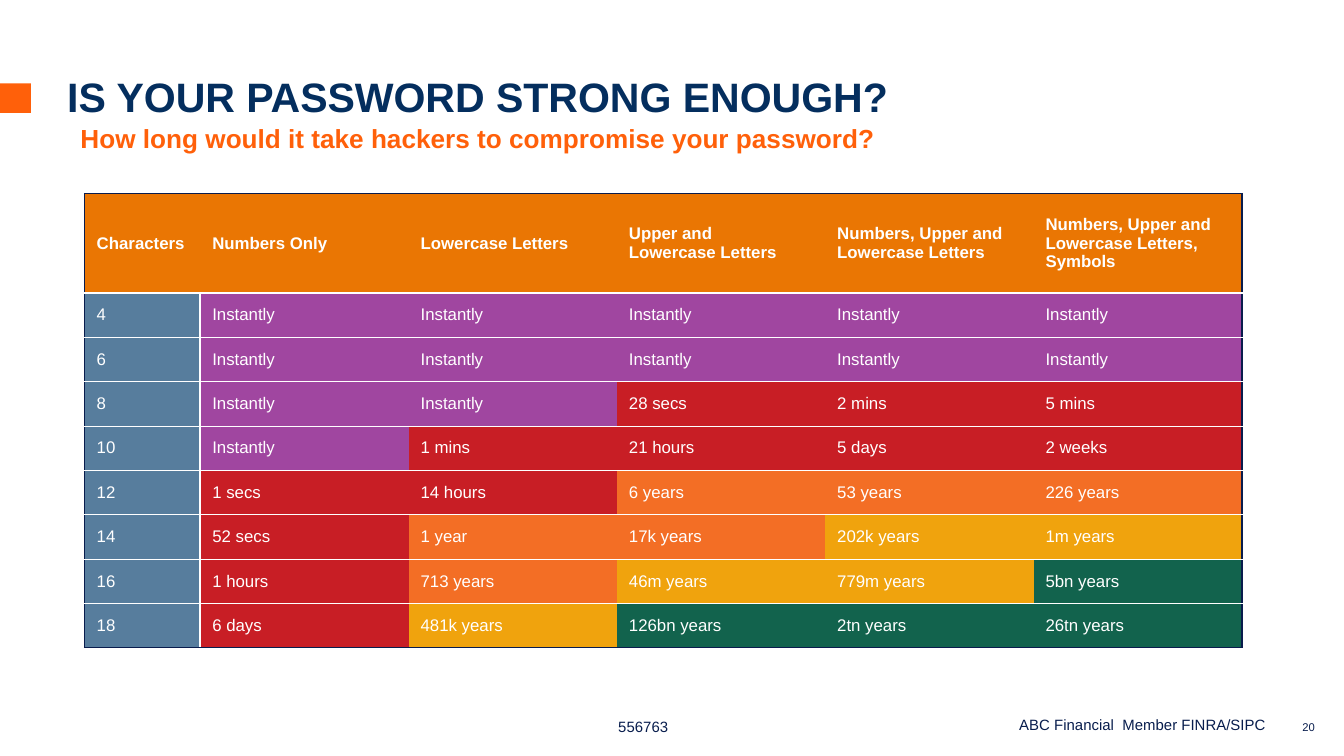
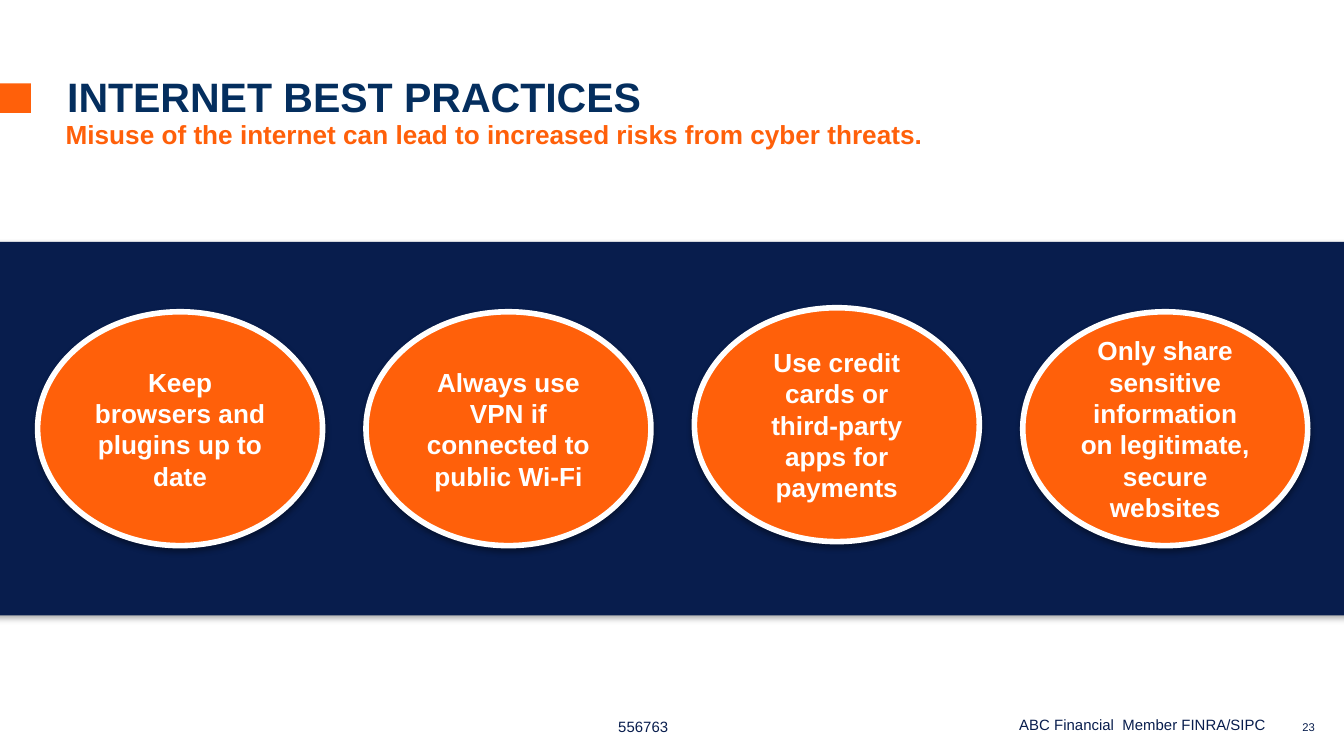
from copy import deepcopy

from lxml.etree import SubElement
from pptx import Presentation
from pptx.dml.color import RGBColor
from pptx.enum.shapes import MSO_SHAPE as Shape
from pptx.enum.text import MSO_ANCHOR as Anchor, MSO_AUTO_SIZE as AutoSize, PP_ALIGN as Align
from pptx.oxml.ns import qn
from pptx.util import Inches, Pt

FONT = "Arial"
NAVY, TITLE_BLUE, ORANGE, WHITE = "081D4D", "042E5E", "FF600A", "FFFFFF"
HEADER_ORANGE, STEEL, FRAME_NAVY = "EA7603", "577D9D", "091C4D"
RISK_COLOURS = {"P": "A046A0", "R": "C81E25", "O": "F36E25", "Y": "F0A30D", "G": "12634D"}
NO_INSETS = (0, 0, 0, 0)
BOX_INSETS = (0.1, 0.05, 0.1, 0.05)
CELL_INSETS = (0.09, 0.04, 0.09, 0.04)

HEADINGS = [
    "Characters", "Numbers Only", "Lowercase Letters", "Upper and\vLowercase Letters",
    "Numbers, Upper and Lowercase Letters", "Numbers, Upper and Lowercase Letters, Symbols",
]
# Characters, risk code of each time, times to compromise
CRACK_TIMES = [
    ("4", "PPPPP", ["Instantly"] * 5),
    ("6", "PPPPP", ["Instantly"] * 5),
    ("8", "PPRRR", ["Instantly", "Instantly", "28 secs", "2 mins", "5 mins"]),
    ("10", "PRRRR", ["Instantly", "1 mins", "21 hours", "5 days", "2 weeks"]),
    ("12", "RROOO", ["1 secs", "14 hours", "6 years", "53 years", "226 years"]),
    ("14", "ROOYY", ["52 secs", "1 year", "17k years", "202k years", "1m years"]),
    ("16", "ROYYG", ["1 hours", "713 years", "46m years", "779m years", "5bn years"]),
    ("18", "RYGGG", ["6 days", "481k years", "126bn years", "2tn years", "26tn years"]),
]
PRACTICES = [
    ("Keep browsers and plugins up to date", 2.32),
    ("Always use VPN if connected to public Wi-Fi", 2.32),
    ("Use credit cards or third-party apps for payments", 2.29),
    ("Only share sensitive information on legitimate, secure websites", 2.32),
]


def rgb(colour):
    return RGBColor.from_string(colour)


def write(frame, text, size=14, colour=WHITE, bold=False, align=Align.LEFT,
          anchor=Anchor.TOP, insets=BOX_INSETS, line_spacing=None):
    frame.word_wrap = True
    frame.auto_size = AutoSize.NONE
    frame.vertical_anchor = anchor
    (frame.margin_left, frame.margin_top,
     frame.margin_right, frame.margin_bottom) = map(Inches, insets)
    write_paragraph(frame.paragraphs[0], text, size, colour, bold, align, line_spacing)


def write_paragraph(paragraph, text, size, colour, bold, align=Align.LEFT, line_spacing=None):
    paragraph.text = text
    paragraph.alignment = align
    paragraph.space_before = Pt(0)
    if line_spacing:
        paragraph.line_spacing = line_spacing
    for run in paragraph.runs:
        run.font.name, run.font.size, run.font.bold = FONT, Pt(size), bold
        run.font.color.rgb = rgb(colour)
    for line_break in paragraph._p.findall(qn("a:br")):
        line_break.insert(0, deepcopy(paragraph.runs[0]._r.rPr))


def add_text(slide, box, text, **style):
    write(slide.shapes.add_textbox(*map(Inches, box)).text_frame, text, **style)


def add_filled(slide, kind, box, fill, outline=None, shadow=False):
    shape = slide.shapes.add_shape(kind, *map(Inches, box))
    shape.fill.solid()
    shape.fill.fore_color.rgb = rgb(fill)
    if outline:
        shape.line.color.rgb = rgb(outline)
        shape.line.width = Pt(3)
    else:
        shape.line.fill.background()
    shape.shadow.inherit = False
    if shadow:
        add_shadow(shape)
    return shape


def add_shadow(shape):
    effects = shape._element.spPr.find(qn("a:effectLst"))
    outer = SubElement(effects, qn("a:outerShdw"), blurRad=str(Pt(3.1)), dist=str(Pt(1.8)),
                       dir="5400000", rotWithShape="0")
    black = SubElement(outer, qn("a:srgbClr"), val="000000")
    SubElement(black, qn("a:alpha"), val="35000")


def set_border(cell, side, border):
    """Draw one side (L, R, T or B) as (colour, points), or hide it if border is None."""
    properties = cell._tc.get_or_add_tcPr()
    if border is None:
        line = SubElement(properties, qn(f"a:ln{side}"), w="0")
        SubElement(line, qn("a:noFill"))
        return
    colour, width = border
    line = SubElement(properties, qn(f"a:ln{side}"), w=str(Pt(width)))
    fill = SubElement(line, qn("a:solidFill"))
    SubElement(fill, qn("a:srgbClr"), val=colour)


def cell_borders(row, column, last_row, last_column):
    frame, divider, hairline = (FRAME_NAVY, 1), (WHITE, 1), (WHITE, 0.5)
    beside_lengths = divider if row else None
    left = {0: frame, 1: beside_lengths}.get(column)
    right = {0: beside_lengths, last_column: frame}.get(column)
    top = {0: frame, 1: divider}.get(row, hairline)
    bottom = {0: divider, last_row: frame}.get(row, hairline)
    return zip("LRTB", (left, right, top, bottom))


def add_crack_time_table(slide):
    rows = [(HEADINGS, [HEADER_ORANGE] * len(HEADINGS))]
    for length, risks, times in CRACK_TIMES:
        rows.append(([length, *times], [STEEL, *(RISK_COLOURS[risk] for risk in risks)]))
    last_row, last_column = len(rows) - 1, len(HEADINGS) - 1

    table = slide.shapes.add_table(len(rows), len(HEADINGS), Inches(0.63), Inches(1.44),
                                   Inches(8.6), Inches(3.39)).table
    table.horz_banding = False
    for column, table_column in enumerate(table.columns):
        table_column.width = Inches(1.55 if column else 0.86)
    for row, (texts, fills) in enumerate(rows):
        table.rows[row].height = Inches(0.33 if row else 0.74)
        for column, (text, fill) in enumerate(zip(texts, fills)):
            cell = table.cell(row, column)
            (cell.margin_left, cell.margin_top,
             cell.margin_right, cell.margin_bottom) = map(Inches, CELL_INSETS)
            cell.vertical_anchor = Anchor.MIDDLE
            write_paragraph(cell.text_frame.paragraphs[0], text, 9, WHITE, row == 0)
            for side, border in cell_borders(row, column, last_row, last_column):
                set_border(cell, side, border)
            cell.fill.solid()
            cell.fill.fore_color.rgb = rgb(fill)


def add_practice_ovals(slide):
    add_filled(slide, Shape.RECTANGLE, (-0.35, 1.8, 10.8, 2.78), NAVY, shadow=True)
    first_left, last_left = 0.28, 7.61
    step = (last_left - first_left) / (len(PRACTICES) - 1)
    for index, (practice, top) in enumerate(PRACTICES):
        oval = add_filled(slide, Shape.OVAL, (first_left + index * step, top, 2.12, 1.74),
                          ORANGE, outline=WHITE, shadow=True)
        write(oval.text_frame, practice, bold=True, align=Align.CENTER, anchor=Anchor.MIDDLE)


def add_base_slide(deck, title, subtitle, subtitle_at, number):
    """Add a slide with the title, subtitle, marker and footer that all slides share."""
    slide = deck.slides.add_slide(deck.slide_layouts[5])
    footer = dict(size=8, colour=NAVY, anchor=Anchor.BOTTOM, insets=NO_INSETS)
    add_text(slide, (6.03, 5.33, 3.39, 0.13), "ABC Financial  Member FINRA/SIPC",
             **footer, align=Align.RIGHT)
    add_text(slide, (9.69, 5.36, 0.19, 0.1), number, **{**footer, "size": 6})
    add_text(slide, (4.6, 5.04, 2.89, 0.43), "556763", **footer)
    add_filled(slide, Shape.RECTANGLE, (0, 0.62, 0.23, 0.22), ORANGE)

    heading = slide.shapes.title
    heading.left, heading.top, heading.width, heading.height = map(Inches, (0.5, 0.5, 8.8, 0.4))
    write(heading.text_frame, title, size=22, colour=TITLE_BLUE, bold=True,
          anchor=Anchor.BOTTOM, insets=NO_INSETS, line_spacing=0.9)
    add_text(slide, (*subtitle_at, 8.91, 0.58), subtitle, colour=ORANGE, bold=True,
             line_spacing=Pt(22))
    return slide


def main():
    deck = Presentation()
    deck.slide_width = Inches(10)
    deck.slide_height = deck.slide_width * 9 // 16
    passwords = add_base_slide(
        deck, "IS YOUR PASSWORD STRONG ENOUGH?",
        "How long would it take hackers to compromise your password?", (0.5, 0.79), "20")
    add_crack_time_table(passwords)
    internet = add_base_slide(
        deck, "INTERNET BEST PRACTICES",
        "Misuse of the internet can lead to increased risks from cyber threats.",
        (0.39, 0.76), "23")
    add_practice_ovals(internet)
    deck.save("out.pptx")


if __name__ == "__main__":
    main()
